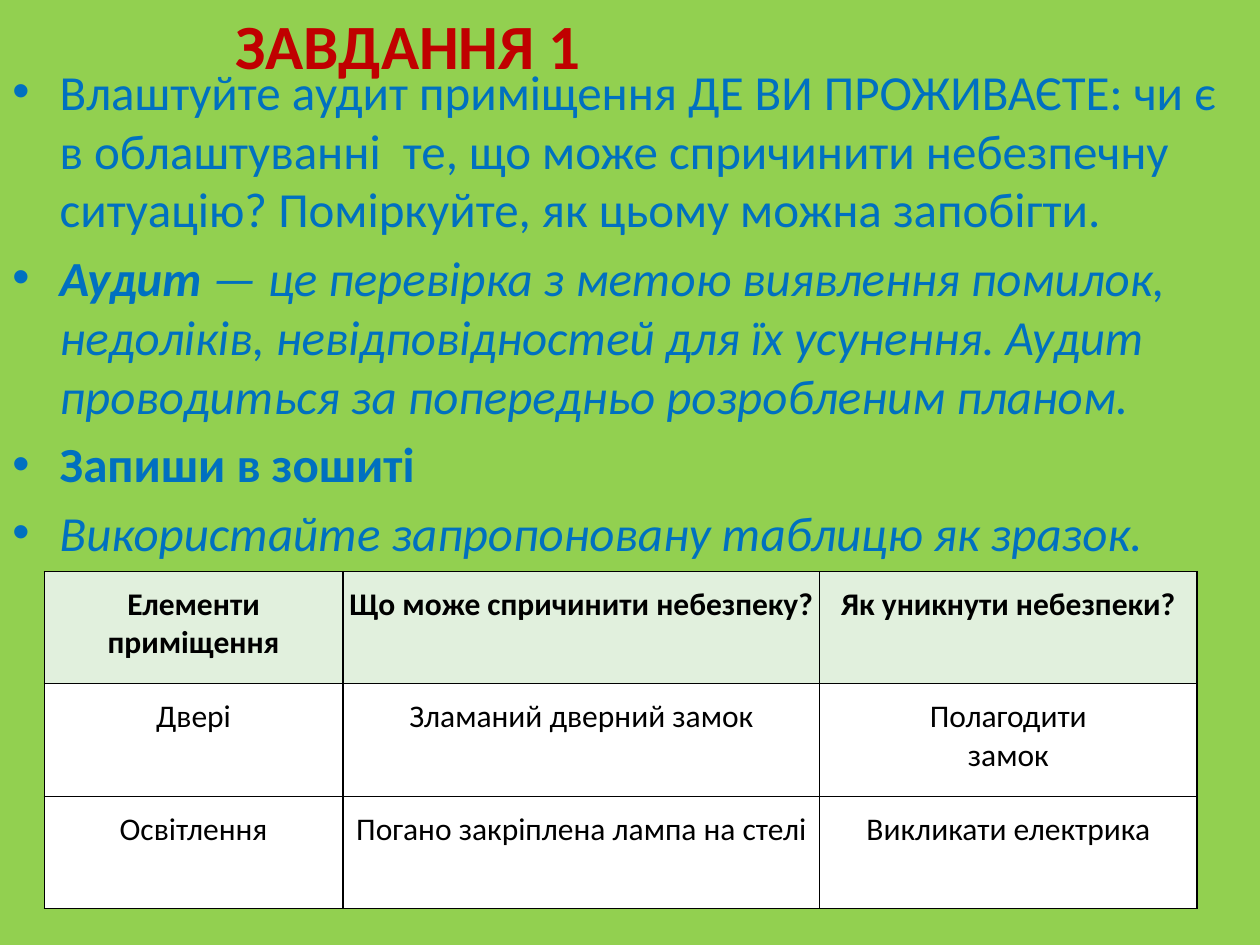
"""Build the task slide about a home safety audit."""
from dataclasses import dataclass

from lxml.etree import SubElement
from pptx import Presentation
from pptx.dml.color import RGBColor as Color
from pptx.enum.text import MSO_AUTO_SIZE as AutoSize, PP_ALIGN as Align
from pptx.oxml.ns import qn
from pptx.util import Pt


@dataclass(frozen=True)
class Theme:
    font: str = "Calibri"
    page: str = "92D050"
    title: str = "C00000"
    body: str = "0070C0"
    ink: str = "000000"
    header: str = "E1F0DD"
    cell: str = "FFFFFF"
    title_size: float = 36
    body_size: float = 28
    table_size: float = 18
    border: float = 0.75


THEME = Theme()

TASKS = [
    [("Влаштуйте аудит приміщення ДЕ ВИ ПРОЖИВАЄТЕ: чи є в облаштуванні  те, "
      "що може спричинити небезпечну ситуацію? Поміркуйте, як цьому можна "
      "запобігти.", False, False)],
    [("Аудит", True, True),
     (" — це перевірка з метою виявлення помилок, недоліків, "
      "невідповідностей для їх усунення. Аудит проводиться за попередньо "
      "розробленим планом.", False, True)],
    [("Запиши в зошиті", True, False)],
    [("Використайте запропоновану таблицю як зразок.", False, True)],
]

ROWS = [
    [["Елементи приміщення"], ["Що може спричинити небезпеку?"],
     ["Як уникнути небезпеки?"]],
    [["Двері"], ["Зламаний дверний замок"], ["Полагодити", "замок"]],
    [["Освітлення"], ["Погано закріплена лампа на стелі"],
     ["Викликати електрика"]],
]


def add_span(para, text, size, color, bold=False, italic=False):
    span = para.add_run()
    span.text = text
    font = span.font
    font.name, font.size = THEME.font, Pt(size)
    font.bold, font.italic = bold, italic
    font.color.rgb = Color.from_string(color)


def paragraphs(frame, items):
    for index, item in enumerate(items):
        yield (frame.add_paragraph() if index else frame.paragraphs[0]), item


def add_box(page, left, top, width, height):
    box = page.shapes.add_textbox(Pt(left), Pt(top), Pt(width), Pt(height))
    box.text_frame.word_wrap = True
    return box.text_frame


def add_bullet(para, indent):
    props = para._p.get_or_add_pPr()
    props.set("marL", str(Pt(indent)))
    props.set("indent", str(Pt(-indent)))
    SubElement(props, qn("a:buFont"), typeface="Arial")
    SubElement(props, qn("a:buChar"), char="•")


def add_tasks(page):
    frame = add_box(page, 0, 31.5, 702.75, 425.5)
    for para, spans in paragraphs(frame, TASKS):
        para.space_before = Pt(THEME.body_size * 0.2)
        add_bullet(para, 27)
        for text, bold, italic in spans:
            add_span(para, text, THEME.body_size, THEME.body, bold, italic)


def add_borders(cell):
    props = cell._tc.get_or_add_tcPr()
    for side in ("lnL", "lnR", "lnT", "lnB"):
        line = SubElement(props, qn(f"a:{side}"), w=str(Pt(THEME.border)))
        fill = SubElement(line, qn("a:solidFill"))
        SubElement(fill, qn("a:srgbClr"), val=THEME.ink)


def fill_cell(cell, lines, is_header):
    add_borders(cell)
    cell.fill.solid()
    cell.fill.fore_color.rgb = Color.from_string(
        THEME.header if is_header else THEME.cell)
    cell.margin_left = cell.margin_right = cell.margin_bottom = 0
    cell.margin_top = Pt(8)
    for para, text in paragraphs(cell.text_frame, lines):
        para.alignment = Align.CENTER
        add_span(para, text, THEME.table_size, THEME.ink, is_header)


def add_hazards(page):
    widths, height = (170.75, 272.5, 215.5), 64.25
    table = page.shapes.add_table(
        len(ROWS), len(widths), Pt(25.25), Pt(326.5),
        Pt(sum(widths)), Pt(height * len(ROWS))).table
    table.horz_banding = False
    for column, width in zip(table.columns, widths):
        column.width = Pt(width)
    for index, row in enumerate(ROWS):
        table.rows[index].height = Pt(height)
        for cell, lines in zip(table.rows[index].cells, row):
            fill_cell(cell, lines, index == 0)


def add_title(page):
    frame = add_box(page, 127.5, 0, 334.75, 51)
    frame.auto_size = AutoSize.SHAPE_TO_FIT_TEXT
    add_span(frame.paragraphs[0], "ЗАВДАННЯ 1", THEME.title_size,
             THEME.title, bold=True)


def main():
    deck = Presentation()
    deck.slide_width, deck.slide_height = Pt(720), Pt(540)
    page = deck.slides.add_slide(deck.slide_layouts[6])
    page.background.fill.solid()
    page.background.fill.fore_color.rgb = Color.from_string(THEME.page)
    add_tasks(page)
    add_hazards(page)
    add_title(page)
    deck.save("out.pptx")


if __name__ == "__main__":
    main()
